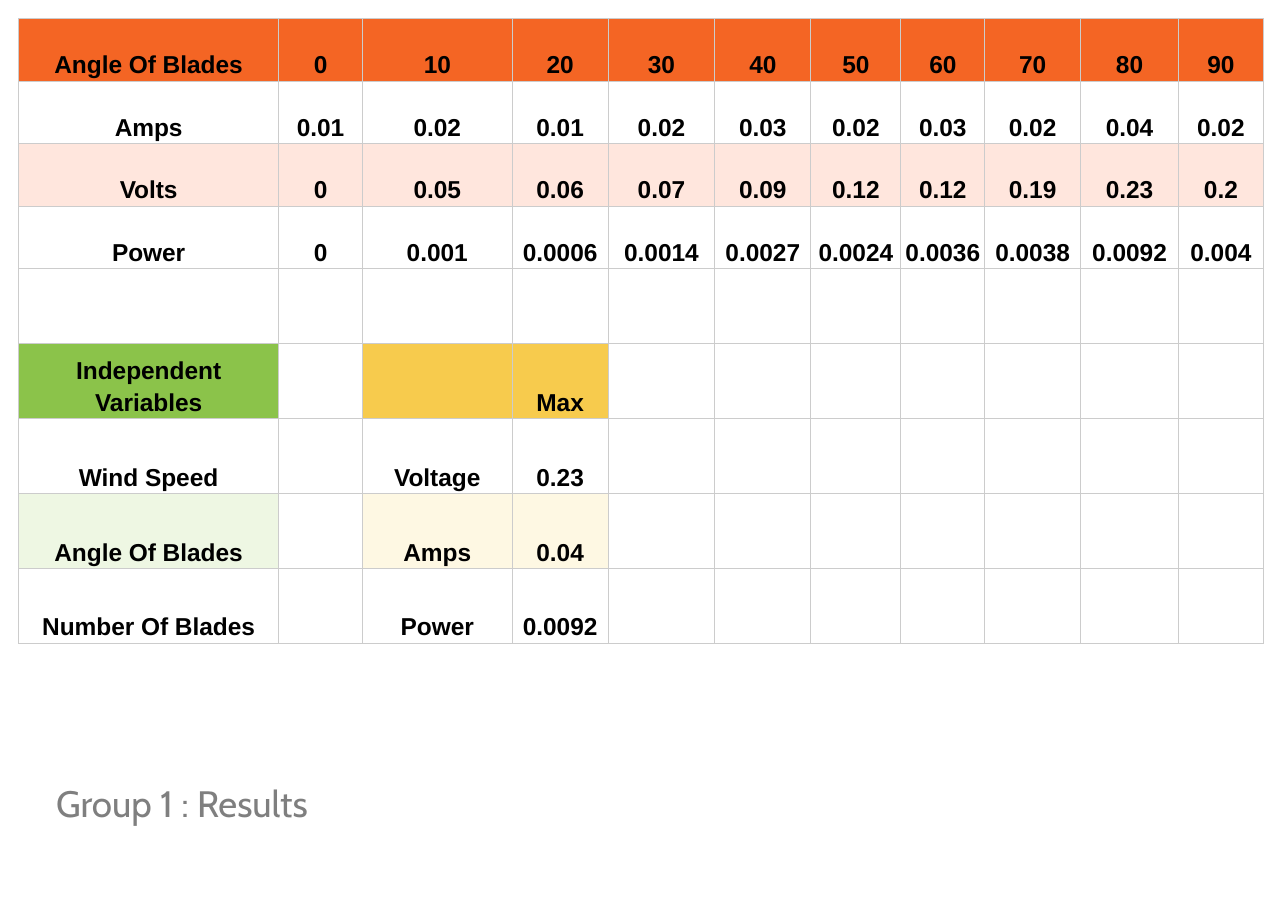
from dataclasses import dataclass

from lxml.etree import SubElement
from pptx import Presentation
from pptx.dml.color import RGBColor as Color
from pptx.enum.text import MSO_ANCHOR as Anchor, PP_ALIGN as Align
from pptx.oxml.ns import qn
from pptx.util import Inches, Pt


@dataclass(frozen=True)
class Theme:
    ink: str = "000000"
    caption: str = "7F7F7F"
    grid: str = "CCCCCC"
    white: str = "FFFFFF"
    orange: str = "F46524"
    pale_orange: str = "FFE6DD"
    green: str = "8BC34A"
    pale_green: str = "EEF7E3"
    yellow: str = "F7CB4D"
    pale_yellow: str = "FEF8E3"
    table_font: str = "Arial"
    caption_font: str = "Cabin"
    table_size: int = 16
    caption_size: int = 24
    grid_line: float = 0.75


THEME = Theme()
WIDTH, HEIGHT = Inches(11.69), Inches(8.27)
COLUMN_SHARES = [20.19, 6.5, 11.63, 7.44, 8.3, 7.44, 7.01, 6.5, 7.44, 7.61, 6.59]
ROW_SHARES = [6.86] * 4 + [8.23] * 5

READINGS = [
    ["Angle Of Blades", *(str(angle) for angle in range(0, 100, 10))],
    ["Amps", "0.01", "0.02", "0.01", "0.02", "0.03", "0.02", "0.03", "0.02", "0.04", "0.02"],
    ["Volts", "0", "0.05", "0.06", "0.07", "0.09", "0.12", "0.12", "0.19", "0.23", "0.2"],
    ["Power", "0", "0.001", "0.0006", "0.0014", "0.0027", "0.0024", "0.0036", "0.0038",
     "0.0092", "0.004"],
]
VARIABLES = [["Independent Variables"], ["Wind Speed"], ["Angle Of Blades"], ["Number Of Blades"]]
MAXIMA = [["", "Max"], ["Voltage", "0.23"], ["Amps", "0.04"], ["Power", "0.0092"]]


def across(percent):
    return round(WIDTH * percent / 100)


def down(percent):
    return round(HEIGHT * percent / 100)


def write(frame, text, *, font, size, color, bold=False, align=Align.LEFT, spacing=1.0):
    para = frame.paragraphs[0]
    para.alignment = align
    para.line_spacing = spacing
    para.space_before = Pt(0)
    span = para.add_run()
    span.text = text
    span.font.name = font
    span.font.size = Pt(size)
    span.font.bold = bold
    span.font.color.rgb = Color.from_string(color)


def outline(cell):
    properties = cell._tc.get_or_add_tcPr()
    for side in ("lnL", "lnR", "lnT", "lnB"):
        line = SubElement(properties, qn(f"a:{side}"), w=str(Pt(THEME.grid_line)))
        fill = SubElement(line, qn("a:solidFill"))
        SubElement(fill, qn("a:srgbClr"), val=THEME.grid)


def add_grid(page):
    table = page.shapes.add_table(
        len(ROW_SHARES), len(COLUMN_SHARES), across(1.45), down(2.06),
        across(sum(COLUMN_SHARES)), down(sum(ROW_SHARES))).table
    table.first_row = table.horz_banding = False
    for column, share in zip(table.columns, COLUMN_SHARES):
        column.width = across(share)
    for row, share in zip(table.rows, ROW_SHARES):
        row.height = down(share)
    for cell in table.iter_cells():
        outline(cell)
        cell.fill.background()
    return table


def fill_block(table, top, left, rows, header, band):
    colors = [header, THEME.white, band, THEME.white]
    for row, (texts, color) in enumerate(zip(rows, colors), top):
        for column, text in enumerate(texts, left):
            cell = table.cell(row, column)
            cell.fill.solid()
            cell.fill.fore_color.rgb = Color.from_string(color)
            cell.vertical_anchor = Anchor.BOTTOM
            cell.margin_left = cell.margin_right = Inches(0.03)
            cell.margin_top = cell.margin_bottom = Inches(0.02)
            if text:
                write(cell.text_frame, text, font=THEME.table_font, size=THEME.table_size,
                      color=THEME.ink, bold=True, align=Align.CENTER, spacing=1.15)


def add_caption(page, text):
    box = page.placeholders[1]
    box.left, box.top = across(3.42), down(82.22)
    box.width, box.height = across(65.61), down(11.73)
    frame = box.text_frame
    frame.word_wrap = True
    frame.vertical_anchor = Anchor.MIDDLE
    frame.margin_left = frame.margin_right = Inches(0.11)
    frame.margin_top = frame.margin_bottom = Inches(0.11)
    write(frame, text, font=THEME.caption_font, size=THEME.caption_size, color=THEME.caption)


def main():
    deck = Presentation()
    deck.slide_width, deck.slide_height = WIDTH, HEIGHT
    page = deck.slides.add_slide(deck.slide_layouts.get_by_name("Section Header"))
    title = page.shapes.title.element
    title.getparent().remove(title)
    add_caption(page, "Group 1 : Results")
    table = add_grid(page)
    fill_block(table, 0, 0, READINGS, THEME.orange, THEME.pale_orange)
    fill_block(table, 5, 0, VARIABLES, THEME.green, THEME.pale_green)
    fill_block(table, 5, 2, MAXIMA, THEME.yellow, THEME.pale_yellow)
    deck.save("out.pptx")


if __name__ == "__main__":
    main()
